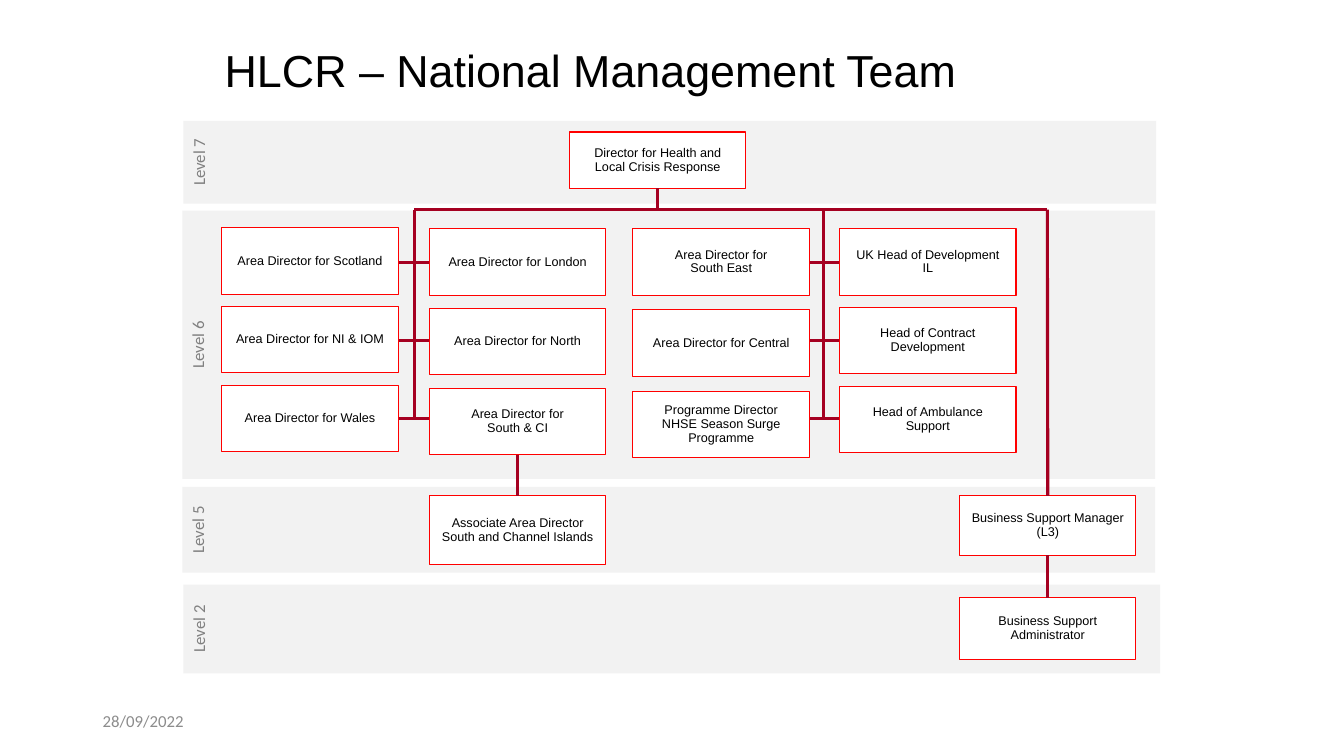
"""Build the national management team organisation chart."""
from dataclasses import dataclass

import lxml.etree
import pptx
import pptx.dml.color
import pptx.enum.shapes
import pptx.enum.text
import pptx.oxml.ns
import pptx.util

WIDE, HIGH = pptx.util.Inches(13.33), pptx.util.Inches(7.5)
COLS, ROWS = 160, 90
SHAPE = pptx.enum.shapes.MSO_SHAPE
ALIGN = pptx.enum.text.PP_ALIGN
ANCHOR = pptx.enum.text.MSO_ANCHOR


@dataclass(frozen=True)
class Theme:
    """Colours, fonts and type sizes of the slide."""
    band: str = "F2F2F2"
    label: str = "808080"
    date: str = "8C8C8C"
    card: str = "FFFFFF"
    edge: str = "FF0000"
    link: str = "A50021"
    ink: str = "000000"
    head: str = "Arial"
    body: str = "Calibri"
    large: int = 32
    mid: int = 12
    small: int = 9


THEME = Theme()
CARD_W, CARD_H = 21, 7.92
TEAMS = [
    (4.68, 2.04, 9.36, ["Area Director for Scotland",
                        "Area Director for NI & IOM",
                        "Area Director for Wales"]),
    (29.4, 2.16, 9.48, ["Area Director for London",
                        "Area Director for North",
                        "Area Director for\vSouth & CI"]),
    (53.64, 2.16, 9.66, ["Area Director for\vSouth East",
                         "Area Director for Central",
                         "Programme Director\vNHSE Season Surge Programme"]),
    (78.24, 2.16, 9.36, ["UK Head of Development\vIL",
                         "Head of Contract Development",
                         "Head of Ambulance Support"]),
]


def across(cols):
    """Turn grid columns into a length."""
    return round(WIDE * cols / COLS)


def down(rows):
    """Turn grid rows into a length."""
    return round(HIGH * rows / ROWS)


def place(box):
    """Turn a grid box into lengths."""
    x, y, w, h = box
    return across(x), down(y), across(w), down(h)


def tint(name):
    """Give the colour for a hex name."""
    return pptx.dml.color.RGBColor.from_string(name)


def write(shape, text, size, face, ink, align, anchor=ANCHOR.MIDDLE):
    """Set the wording and type of a shape."""
    frame = shape.text_frame
    frame.word_wrap = True
    frame.vertical_anchor = anchor
    para = frame.paragraphs[0]
    para.text = text
    para.alignment = align
    para.font.size = pptx.util.Pt(size)
    para.font.name = face
    para.font.color.rgb = tint(ink)
    return para


def block(slide, kind, box, fill):
    """Add a flat filled shape without an outline."""
    shape = slide.shapes.add_shape(kind, *place(box))
    shape.shadow.inherit = False
    shape.fill.solid()
    shape.fill.fore_color.rgb = tint(fill)
    shape.line.fill.background()
    return shape


def band(slide, box, text):
    """Draw a level band with its upright label."""
    shape = block(slide, SHAPE.ROUNDED_RECTANGLE, box, THEME.band)
    shape.adjustments[0] = 0
    write(shape, text, THEME.mid, THEME.body, THEME.label,
          ALIGN.CENTER, ANCHOR.TOP)
    shape.text_frame._txBody.bodyPr.set("vert", "vert270")


def card(slide, box, text):
    """Draw one post on the chart."""
    shape = block(slide, SHAPE.RECTANGLE, box, THEME.card)
    shape.line.color.rgb = tint(THEME.edge)
    shape.line.width = pptx.util.Pt(0.75)
    para = write(shape, text, THEME.small, THEME.head, THEME.ink, ALIGN.CENTER)
    para.line_spacing = 0.9
    return shape


def link(slide, start, end, above=None, below=None):
    """Draw a line, joined to the cards above and below if given."""
    line = slide.shapes.add_connector(
        pptx.enum.shapes.MSO_CONNECTOR.STRAIGHT,
        across(start[0]), down(start[1]), across(end[0]), down(end[1]))
    line.line.color.rgb = tint(THEME.link)
    line.line.width = pptx.util.Pt(2.25)
    lxml.etree.SubElement(line._element.spPr,
                          pptx.oxml.ns.qn("a:effectLst"))
    if above is not None:
        line.begin_connect(above, 2)
    if below is not None:
        line.end_connect(below, 0)


def heading(slide, box):
    """Write the slide title."""
    para = write(slide.shapes.add_textbox(*place(box)),
                 "HLCR – National Management Team", THEME.large,
                 THEME.head, THEME.ink, ALIGN.LEFT)
    para.line_spacing = 0.9


def footer(slide, box):
    """Write the date."""
    write(slide.shapes.add_textbox(*place(box)), "28/09/2022", THEME.mid,
          THEME.body, THEME.date, ALIGN.LEFT)


def seven(slide, box):
    """Draw the director's level and return the director."""
    band(slide, box, "Level 7")
    return card(slide, (box[0] + 45.96, box[1] + 1.32, CARD_W, 6.72),
                "Director for Health and Local Crisis Response")


def six(slide, box, chief):
    """Draw the area teams; return the last southern post and the bus end."""
    x, y = box[:2]
    band(slide, box, "Level 6")
    bus, foot = y - 0.12, y + 24.72
    poles = x + 27.6, x + 76.32
    end = x + 102.96, bus
    link(slide, (poles[0], bus), end)
    stem = x + 56.58, bus
    link(slide, stem, stem, above=chief)
    for pole, mid in zip(poles, (x + 27.66, x + 75.66)):
        link(slide, (pole, bus), (pole, foot))
        for row in range(3):
            level = y + 6.12 + 9.3 * row
            link(slide, (mid - 5.1, level), (mid + 5.1, level))
    posts = [[card(slide, (x + left, y + top + step * row, CARD_W, CARD_H), text)
              for row, text in enumerate(names)]
             for left, top, step, names in TEAMS]
    return posts[1][-1], end


def five(slide, box, south, end):
    """Draw the associate and manager level and return the manager."""
    x, y = box[:2]
    band(slide, box, "Level 5")
    aide = card(slide, (x + 29.4, y + 1.08, CARD_W, 8.16),
                "Associate Area Director\vSouth and Channel Islands")
    boss = card(slide, (x + 92.52, y + 1.08, CARD_W, 7.08),
                "Business Support Manager (L3)")
    link(slide, end, end, above=south, below=aide)
    link(slide, end, end, below=boss)
    return boss


def two(slide, box, boss):
    """Draw the administrator's level."""
    x, y = box[:2]
    band(slide, box, "Level 2")
    clerk = card(slide, (x + 92.4, y + 1.56, CARD_W, 7.32),
                 "Business Support Administrator")
    link(slide, (x, y), (x, y), above=boss, below=clerk)


def main():
    """Build and save the slide."""
    deck = pptx.Presentation()
    deck.slide_width, deck.slide_height = WIDE, HIGH
    slide = deck.slides.add_slide(deck.slide_layouts[6])
    heading(slide, (25.56, 4.56, 108.84, 8.28))
    chief = seven(slide, (21.84, 14.4, 115.8, 9.84))
    south, end = six(slide, (21.72, 25.08, 115.8, 31.92), chief)
    boss = five(slide, (21.72, 57.96, 115.8, 10.2), south, end)
    two(slide, (21.84, 69.6, 116.28, 10.56), boss)
    footer(slide, (11.04, 83.4, 36, 4.8))
    deck.save("out.pptx")


if __name__ == "__main__":
    main()
